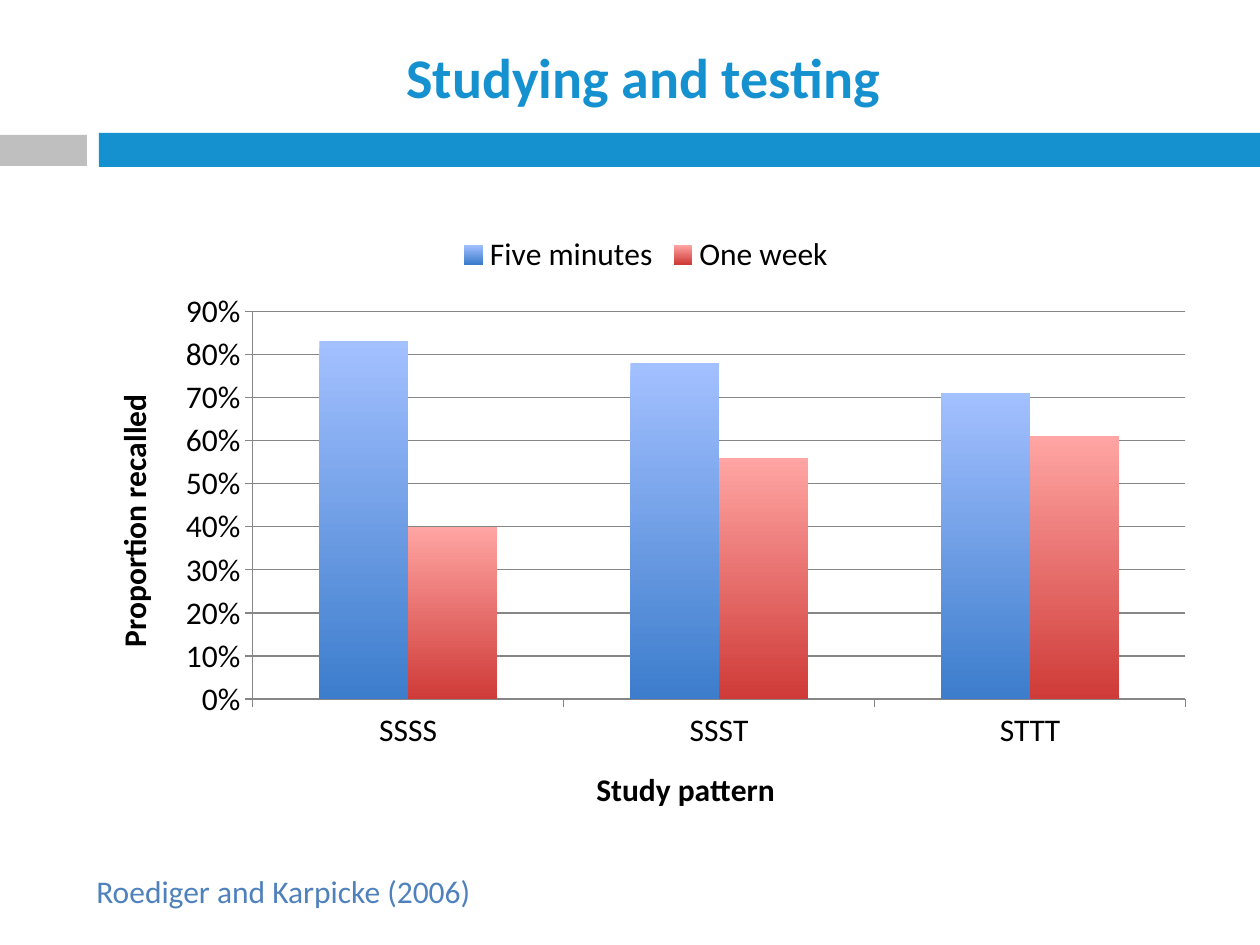
from typing import NamedTuple

from pptx import Presentation
from pptx.chart.data import CategoryChartData as ChartData
from pptx.dml.color import RGBColor
from pptx.enum.chart import XL_CHART_TYPE as ChartType
from pptx.enum.chart import XL_LEGEND_POSITION as LegendPosition
from pptx.enum.chart import XL_TICK_MARK as TickMark
from pptx.enum.shapes import MSO_SHAPE as Shape
from pptx.enum.text import MSO_ANCHOR as Anchor
from pptx.enum.text import PP_ALIGN as Align
from pptx.util import Emu, Pt

PX_PER_INCH = 126
FONT = "Calibri"
BLUE = RGBColor(0x16, 0x91, 0xD0)
GREY = RGBColor(0xBF, 0xBF, 0xBF)
CITATION_BLUE = RGBColor(0x4F, 0x81, 0xBD)
BLACK = RGBColor(0x00, 0x00, 0x00)
LINE_GREY = RGBColor(0x86, 0x86, 0x86)


class Box(NamedTuple):
    left: int
    top: int
    width: int
    height: int


class Band(NamedTuple):
    box: Box
    color: RGBColor


class Series(NamedTuple):
    name: str
    values: tuple[float, ...]
    top_color: RGBColor
    bottom_color: RGBColor


BANDS = (
    Band(Box(99, 133, 1161, 34), BLUE),
    Band(Box(0, 135, 87, 31), GREY),
)
CATEGORIES = ("SSSS", "SSST", "STTT")
SERIES = (
    Series("Five minutes", (0.83, 0.78, 0.71),
           RGBColor(0xA3, 0xC0, 0xFF), RGBColor(0x3C, 0x7D, 0xCC)),
    Series("One week", (0.40, 0.56, 0.61),
           RGBColor(0xFF, 0xA5, 0xA3), RGBColor(0xCF, 0x3B, 0x38)),
)


def px(length: int) -> Emu:
    return Emu(round(length * 914400 / PX_PER_INCH))


def place(box: Box) -> tuple[Emu, ...]:
    return tuple(px(length) for length in box)


def style_font(font, size: int, color: RGBColor, bold: bool = False) -> None:
    font.name = FONT
    font.size = Pt(size)
    font.bold = bold
    font.color.rgb = color


def add_band(slide, band: Band) -> None:
    shape = slide.shapes.add_shape(Shape.RECTANGLE, *place(band.box))
    shape.shadow.inherit = False
    shape.fill.solid()
    shape.fill.fore_color.rgb = band.color
    shape.line.fill.background()


def set_title(slide, text: str, box: Box) -> None:
    title = slide.shapes.title
    title.left, title.top, title.width, title.height = place(box)
    frame = title.text_frame
    frame.text = text
    frame.vertical_anchor = Anchor.MIDDLE
    paragraph = frame.paragraphs[0]
    paragraph.alignment = Align.CENTER
    style_font(paragraph.runs[0].font, 32, BLUE, bold=True)


def add_citation(slide, text: str, box: Box) -> None:
    frame = slide.shapes.add_textbox(*place(box)).text_frame
    frame.word_wrap = True
    frame.text = text
    style_font(frame.paragraphs[0].runs[0].font, 18, CITATION_BLUE)


def style_line(line) -> None:
    line.color.rgb = LINE_GREY
    line.width = Pt(0.75)


def style_axis(axis, title: str) -> None:
    frame = axis.axis_title.text_frame
    frame.text = title
    style_font(frame.paragraphs[0].runs[0].font, 18, BLACK, bold=True)
    axis.major_tick_mark = TickMark.OUTSIDE
    axis.minor_tick_mark = TickMark.NONE
    style_line(axis.format.line)


def add_recall_chart(slide, box: Box) -> None:
    data = ChartData(number_format="0%")
    data.categories = CATEGORIES
    for series in SERIES:
        data.add_series(series.name, series.values)
    chart = slide.shapes.add_chart(
        ChartType.COLUMN_CLUSTERED, *place(box), data).chart
    style_font(chart.font, 18, BLACK)
    chart.has_title = False

    # Legend
    chart.has_legend = True
    chart.legend.position = LegendPosition.TOP
    chart.legend.include_in_layout = False

    # Axes
    style_axis(chart.category_axis, "Study pattern")
    value_axis = chart.value_axis
    style_axis(value_axis, "Proportion recalled")
    value_axis.minimum_scale = 0
    value_axis.maximum_scale = 0.9
    value_axis.major_unit = 0.1
    value_axis.tick_labels.number_format = "0%"
    value_axis.tick_labels.number_format_is_linked = False
    value_axis.has_major_gridlines = True
    style_line(value_axis.major_gridlines.format.line)

    # Columns shaded from top to bottom
    plot = chart.plots[0]
    plot.gap_width = 150
    plot.overlap = 0
    plot.vary_by_categories = False
    for column, series in zip(plot.series, SERIES):
        column.invert_if_negative = False
        fill = column.format.fill
        fill.gradient()
        fill.gradient_angle = 270
        for stop, color in zip(fill.gradient_stops,
                               (series.top_color, series.bottom_color)):
            stop.color.rgb = color


def main() -> None:
    presentation = Presentation()
    presentation.slide_width = px(1260)
    presentation.slide_height = px(945)
    slide = presentation.slides.add_slide(presentation.slide_layouts[5])

    # Header
    for band in BANDS:
        add_band(slide, band)
    set_title(slide, "Studying and testing", Box(98, 33, 1091, 86))

    # Results and source
    add_recall_chart(slide, Box(84, 220, 1124, 620))
    add_citation(slide, "Roediger and Karpicke (2006)", Box(84, 866, 718, 50))

    presentation.save("out.pptx")


if __name__ == "__main__":
    main()
